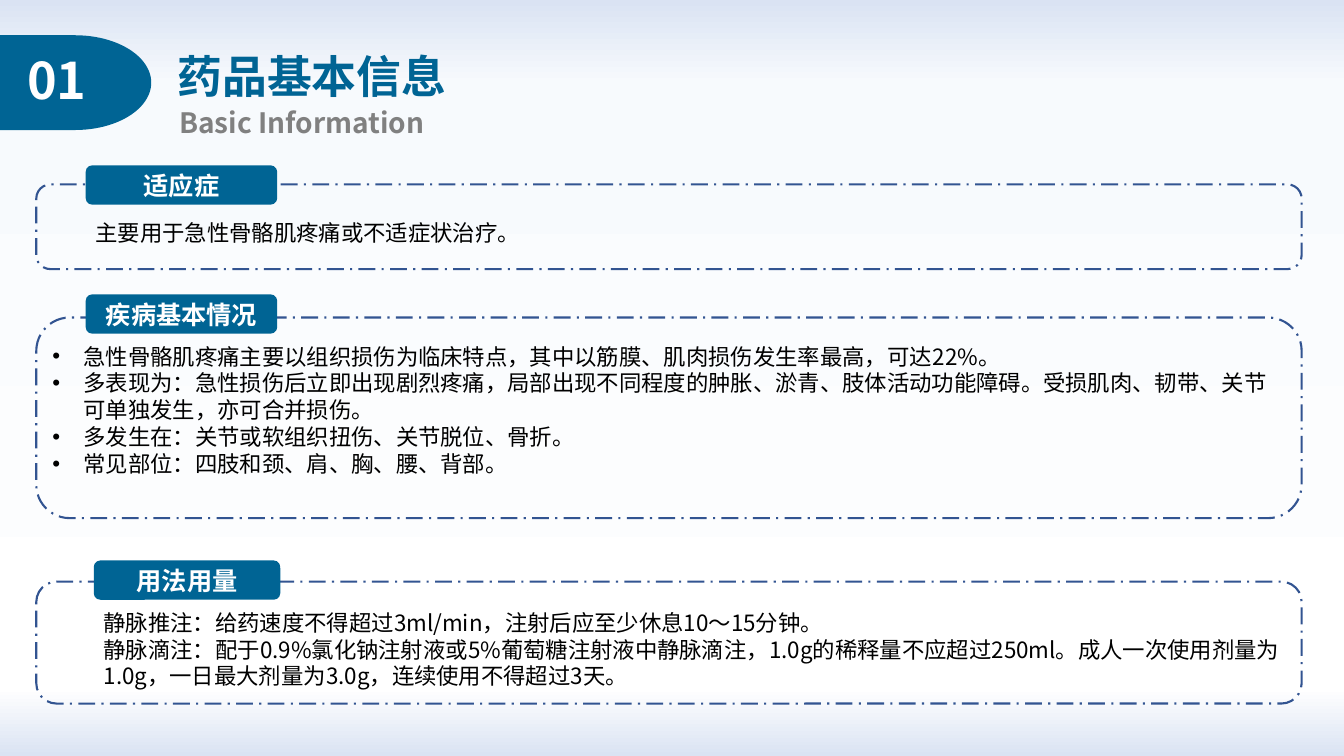
"""Build the drug information slide with three labelled, dashed panels."""
from dataclasses import dataclass

import pptx
import pptx.dml.color
import pptx.enum.dml
import pptx.enum.shapes
import pptx.enum.text
import pptx.oxml
import pptx.oxml.ns
import pptx.util
from pptx.util import Inches

KIND = pptx.enum.shapes.MSO_SHAPE
ALIGN = pptx.enum.text.PP_ALIGN
ANCHOR = pptx.enum.text.MSO_ANCHOR


@dataclass(frozen=True)
class Theme:
    """Colours, type sizes and font of the slide."""
    blue: str = "006494"
    edge: str = "325491"
    grey: str = "808080"
    white: str = "FFFFFF"
    black: str = "000000"
    stops: tuple = ((0, "DAE3F3"), (11, "F7FAFD"), (91, "FFFFFF"), (100, "DAE3F3"))
    font: str = "Noto Sans CJK SC"
    number: int = 36
    title: int = 32
    sub: int = 20
    label: int = 18
    body: int = 16


THEME = Theme()
NUMBER, TITLE, SUB = "01", "药品基本信息", "Basic Information"
LEFT, WIDE, TALL = 0.36, 12.55, 0.39
PANELS = [
    dict(top=1.83, high=0.84, label="适应症", tab=(0.85, 1.64, 1.9, TALL),
         text=(0.85, 2.12, 10.56, 0.37), bullet=False,
         lines=["主要用于急性骨骼肌疼痛或不适症状治疗。"]),
    dict(top=3.15, high=1.99, label="疾病基本情况", tab=(0.85, 2.92, 1.9, TALL),
         text=(0.42, 3.35, 12.38, 1.45), bullet=True,
         lines=["急性骨骼肌疼痛主要以组织损伤为临床特点，其中以筋膜、肌肉损伤发生率最高，可达22%。",
                "多表现为：急性损伤后立即出现剧烈疼痛，局部出现不同程度的肿胀、淤青、肢体活动功能障碍。"
                "受损肌肉、韧带、关节可单独发生，亦可合并损伤。",
                "多发生在：关节或软组织扭伤、关节脱位、骨折。",
                "常见部位：四肢和颈、肩、胸、腰、背部。"]),
    dict(top=5.77, high=1.21, label="用法用量", tab=(0.93, 5.56, 1.85, TALL),
         text=(0.93, 5.99, 11.87, 0.91), bullet=False,
         lines=["静脉推注：给药速度不得超过3ml/min，注射后应至少休息10～15分钟。",
                "静脉滴注：配于0.9%氯化钠注射液或5%葡萄糖注射液中静脉滴注，1.0g的稀释量不应超过250ml。"
                "成人一次使用剂量为1.0g，一日最大剂量为3.0g，连续使用不得超过3天。"]),
]


def rgb(code):
    """Turn a hex code into a colour."""
    return pptx.dml.color.RGBColor.from_string(code)


def node(home, tag, **attrs):
    """Append an XML child with attributes."""
    item = pptx.oxml.parse_xml(f"<{tag} {pptx.oxml.ns.nsdecls('a')}/>")
    for key, value in attrs.items():
        item.set(key, str(value))
    home.append(item)
    return item


def write(shape, lines, size, color, bold=False, align=ALIGN.LEFT,
          space=1.0, anchor=ANCHOR.TOP, bullet=False):
    """Fill a shape with evenly styled paragraphs."""
    frame = shape.text_frame
    frame.word_wrap = True
    frame.auto_size = pptx.enum.text.MSO_AUTO_SIZE.NONE
    frame.vertical_anchor = anchor
    frame.text = "\n".join(lines)
    for para in frame.paragraphs:
        para.alignment, para.line_spacing = align, space
        props = para._p.get_or_add_pPr()
        if bullet:
            props.set("marL", str(Inches(0.31)))
            props.set("indent", str(Inches(-0.31)))
            node(props, "a:buFont", typeface="Arial")
            node(props, "a:buChar", char="•")
        font = para.font
        font.size, font.bold, font.name = pptx.util.Pt(size), bold, THEME.font
        font.color.rgb = rgb(color)
        node(font._element, "a:ea", typeface=THEME.font)


def block(slide, kind, box, fill=None):
    """Add a flat shape, either filled or outlined with dashes."""
    shape = slide.shapes.add_shape(kind, *map(Inches, box))
    shape.shadow.inherit = False
    if fill:
        shape.fill.solid()
        shape.fill.fore_color.rgb = rgb(fill)
        shape.line.fill.background()
    else:
        shape.fill.background()
        shape.line.color.rgb = rgb(THEME.edge)
        shape.line.width = pptx.util.Pt(1.5)
        shape.line.dash_style = pptx.enum.dml.MSO_LINE.LONG_DASH_DOT
    return shape


def label(slide, box, *args, **style):
    """Add a styled text box."""
    write(slide.shapes.add_textbox(*map(Inches, box)), *args, **style)


def paint(slide):
    """Set the vertical background gradient."""
    fill = slide.background.fill
    fill.gradient()
    fill.gradient_angle = 270
    stops = slide.background._cSld.find(".//" + pptx.oxml.ns.qn("a:gsLst"))
    for stop in list(stops):
        stops.remove(stop)
    for place, code in THEME.stops:
        node(node(stops, "a:gs", pos=place * 1000), "a:srgbClr", val=code)


def header(slide):
    """Add the number badge, title and subtitle."""
    title = slide.shapes.title
    title.left, title.top, title.width, title.height = map(Inches, (0.85, 0.17, 4.49, 0.81))
    write(title, [TITLE], THEME.title, THEME.blue, bold=True, align=ALIGN.CENTER, space=1.5)
    block(slide, KIND.FLOWCHART_DELAY, (-0.01, 0.35, 1.51, 0.94), THEME.blue)
    label(slide, (0.17, 0.44, 0.85, 0.71), [NUMBER], THEME.number, THEME.white,
          bold=True, align=ALIGN.JUSTIFY)
    label(slide, (1.68, 0.83, 2.84, 0.55), [SUB], THEME.sub, THEME.grey,
          bold=True, align=ALIGN.JUSTIFY, space=1.5)


def panel(slide, item):
    """Add a dashed frame with its tab and text."""
    block(slide, KIND.ROUNDED_RECTANGLE, (LEFT, item["top"], WIDE, item["high"]))
    tab = block(slide, KIND.FLOWCHART_ALTERNATE_PROCESS, item["tab"], THEME.blue)
    write(tab, [item["label"]], THEME.label, THEME.white, bold=True,
          align=ALIGN.CENTER, anchor=ANCHOR.MIDDLE)
    label(slide, item["text"], item["lines"], THEME.body, THEME.black, bullet=item["bullet"])


def main():
    """Build and save the slide."""
    deck = pptx.Presentation()
    deck.slide_width, deck.slide_height = Inches(13.33), Inches(7.5)
    slide = deck.slides.add_slide(deck.slide_layouts[5])
    paint(slide)
    header(slide)
    for item in PANELS:
        panel(slide, item)
    deck.save("out.pptx")


if __name__ == "__main__":
    main()
